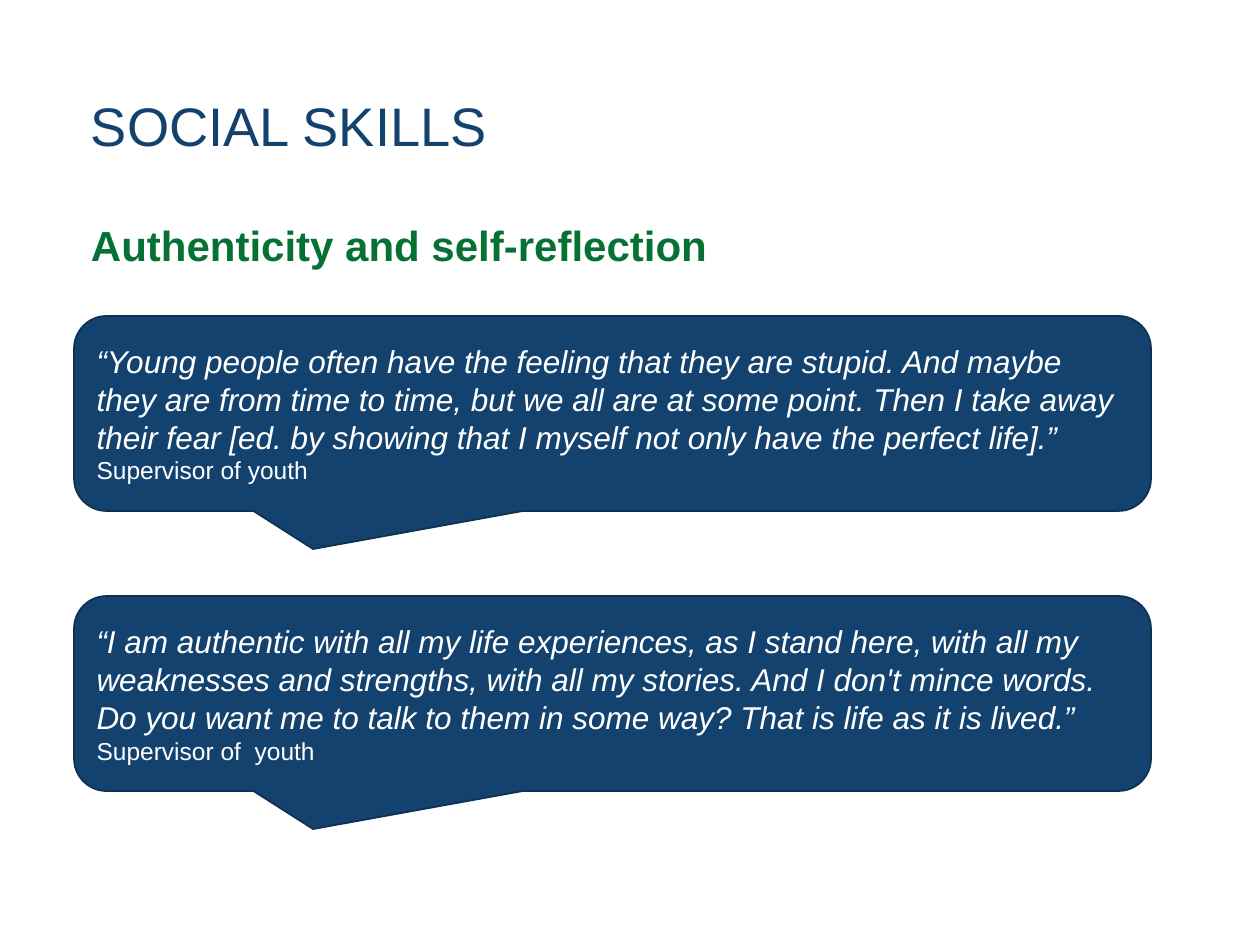
from dataclasses import dataclass

from pptx import Presentation
from pptx.dml.color import RGBColor
from pptx.enum.shapes import MSO_SHAPE
from pptx.enum.text import MSO_ANCHOR, MSO_AUTO_SIZE, PP_ALIGN
from pptx.util import Emu, Pt

SCALE = 914400 / 126
NAVY = RGBColor(0x13, 0x42, 0x6F)
EDGE = RGBColor(0x0E, 0x31, 0x52)
GREEN = RGBColor(0x05, 0x72, 0x33)
WHITE = RGBColor(0xFF, 0xFF, 0xFF)
WIDTH = 1077
TAIL = (-0.278, 0.695, 0.167)


@dataclass
class Quote:
    top: int
    words: str
    source: str


QUOTES = [
    Quote(
        316,
        "“Young people often have the feeling that they are stupid. And maybe "
        "they are from time to time, but we all are at some point. Then I take "
        "away their fear [ed. by showing that I myself not only have the "
        "perfect life].”",
        "Supervisor of youth",
    ),
    Quote(
        596,
        "“I am authentic with all my life experiences, as I stand here, with "
        "all my weaknesses and strengths, with all my stories. And I don't "
        "mince words. Do you want me to talk to them in some way? That is life "
        "as it is lived.”",
        "Supervisor of  youth",
    ),
]


def px(count: int) -> Emu:
    return Emu(round(count * SCALE))


def write(para, text: str, *, size: int, color: RGBColor, bold: bool = False,
          italic: bool = False, spacing=None, after: int = 0) -> None:
    para.alignment = PP_ALIGN.LEFT
    para.line_spacing = spacing
    para.space_after = Pt(after)
    run = para.add_run()
    run.text = text
    font = run.font
    font.name, font.size = "Arial", Pt(size)
    font.bold, font.italic = bold, italic
    font.color.rgb = color


def set_frame(shape, anchor: MSO_ANCHOR, left: int = 13):
    """Wrap and anchor the text of a shape, and return its first paragraph."""
    frame = shape.text_frame
    frame.word_wrap = True
    frame.auto_size = MSO_AUTO_SIZE.NONE
    frame.vertical_anchor = anchor
    frame.margin_left = px(left)
    return frame.paragraphs[0]


def add_title(slide, text: str) -> None:
    title = slide.shapes.title
    title.left, title.top = px(91), px(92)
    title.width, title.height = px(WIDTH), px(141)
    para = set_frame(title, MSO_ANCHOR.TOP, left=0)
    write(para, text, size=31, color=NAVY, spacing=Pt(34))


def add_heading(slide, text: str) -> None:
    box = slide.shapes.add_textbox(px(91), px(210), px(WIDTH), px(282))
    para = set_frame(box, MSO_ANCHOR.TOP, left=0)
    write(para, text, size=24, color=GREEN, bold=True, spacing=1.07, after=8)


def add_quote(slide, quote: Quote) -> None:
    bubble = slide.shapes.add_shape(
        MSO_SHAPE.ROUNDED_RECTANGULAR_CALLOUT,
        px(74), px(quote.top), px(WIDTH), px(195))
    for index, value in enumerate(TAIL):
        bubble.adjustments[index] = value
    bubble.shadow.inherit = False
    bubble.fill.solid()
    bubble.fill.fore_color.rgb = NAVY
    bubble.line.color.rgb = EDGE
    bubble.line.width = Pt(1)
    para = set_frame(bubble, MSO_ANCHOR.MIDDLE)
    write(para, quote.words, size=18, color=WHITE, italic=True)
    write(bubble.text_frame.add_paragraph(), quote.source, size=14, color=WHITE)


def main() -> None:
    deck = Presentation()
    deck.slide_width, deck.slide_height = px(1260), px(945)
    slide = deck.slides.add_slide(deck.slide_layouts[5])
    add_title(slide, "SOCIAL SKILLS")
    add_heading(slide, "Authenticity and self-reflection")
    for quote in QUOTES:
        add_quote(slide, quote)
    deck.save("out.pptx")


if __name__ == "__main__":
    main()
